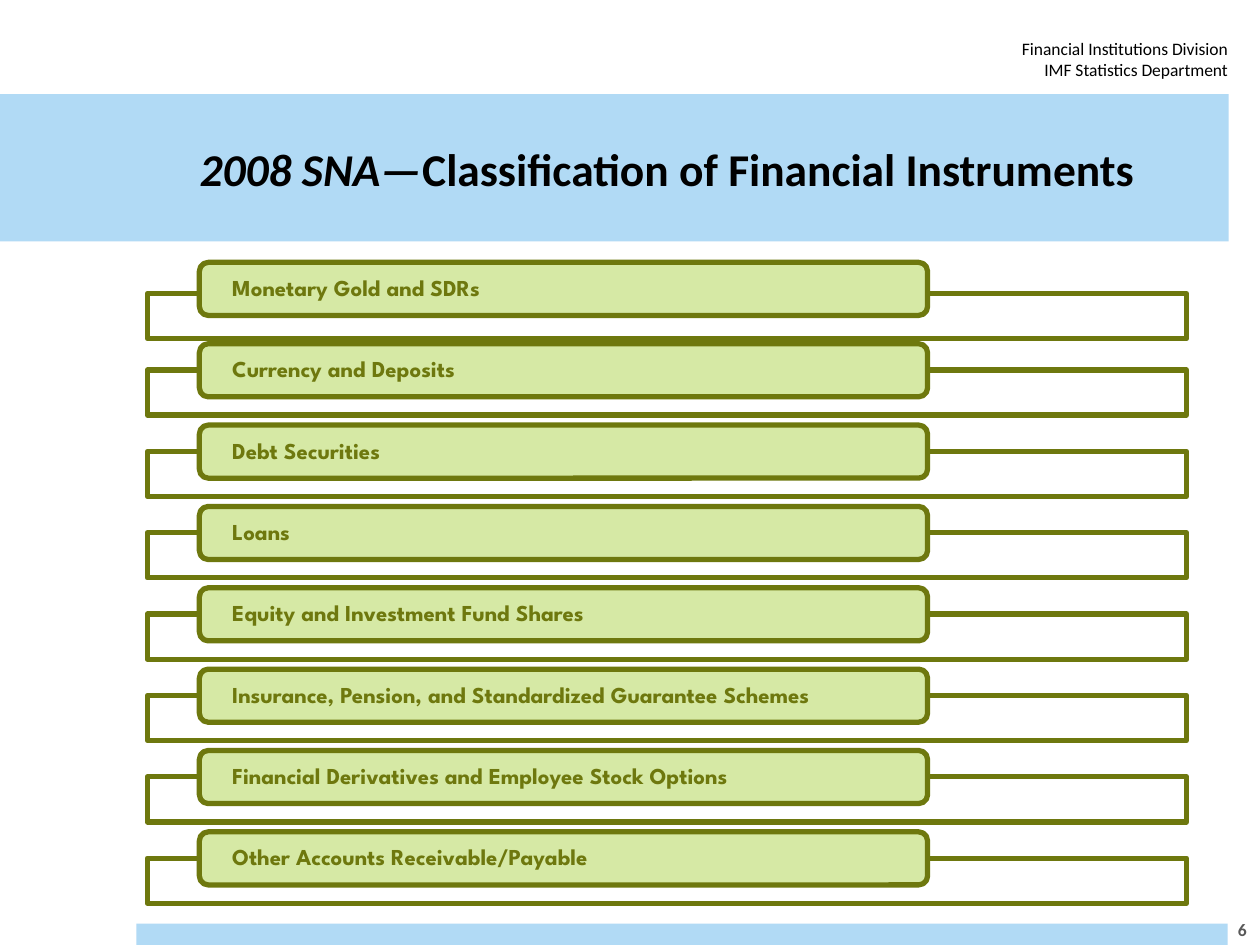
from dataclasses import dataclass

from pptx import Presentation
from pptx.dml.color import RGBColor
from pptx.enum.shapes import MSO_SHAPE
from pptx.enum.text import MSO_ANCHOR, PP_ALIGN
from pptx.util import Cm, Pt

RECT, ROUNDED = MSO_SHAPE.RECTANGLE, MSO_SHAPE.ROUNDED_RECTANGLE
TOP, MIDDLE = MSO_ANCHOR.TOP, MSO_ANCHOR.MIDDLE
LEFT, CENTER, RIGHT = PP_ALIGN.LEFT, PP_ALIGN.CENTER, PP_ALIGN.RIGHT


@dataclass(frozen=True)
class Theme:
    sky: RGBColor = RGBColor(0xB1, 0xDA, 0xF5)
    leaf: RGBColor = RGBColor(0xD6, 0xE9, 0xA5)
    olive: RGBColor = RGBColor(0x6E, 0x78, 0x0E)
    black: RGBColor = RGBColor(0, 0, 0)
    grey: RGBColor = RGBColor(0x59, 0x59, 0x59)
    body_font: str = "Calibri"
    label_font: str = "League Spartan"
    title_size: int = 26
    label_size: int = 13
    small_size: int = 10
    outline: int = 3


class SlideBuilder:
    """Holds the theme and the current slide; lengths are in centimetres."""

    def __init__(self, slide, theme):
        self.slide = slide
        self.theme = theme

    def box(self, kind, place, fill=None, line=None):
        shape = self.slide.shapes.add_shape(kind, *map(Cm, place))
        shape.shadow.inherit = False
        if fill is None:
            shape.fill.background()
        else:
            shape.fill.solid()
            shape.fill.fore_color.rgb = fill
        if line is None:
            shape.line.fill.background()
        else:
            shape.line.color.rgb = line
            shape.line.width = Pt(self.theme.outline)
        return shape

    def text_box(self, place):
        return self.slide.shapes.add_textbox(*map(Cm, place))

    def frame(self, shape, align, anchor=MIDDLE, insets=(0.25, 0.13, 0.25, 0.13)):
        frame = shape.text_frame
        frame.word_wrap = True
        frame.vertical_anchor = anchor
        (frame.margin_left, frame.margin_top,
         frame.margin_right, frame.margin_bottom) = map(Cm, insets)
        paragraph = frame.paragraphs[0]
        paragraph.alignment = align
        return paragraph

    def run(self, paragraph, text, size, color, font=None, bold=False, italic=False):
        run = paragraph.add_run()
        run.text = text
        run.font.name = font or self.theme.body_font
        run.font.size = Pt(size)
        run.font.bold = bold
        run.font.italic = italic
        run.font.color.rgb = color

    def instrument(self, name, label_top, frame_top):
        theme = self.theme
        self.box(RECT, (2.97, frame_top, 20.95, 0.91), line=theme.olive)
        label = self.box(ROUNDED, (4.02, label_top, 14.68, 1.07), theme.leaf, theme.olive)
        paragraph = self.frame(label, LEFT, insets=(0.61, 0, 0.61, 0))
        paragraph.line_spacing = 0.9
        self.run(paragraph, name, theme.label_size, theme.olive, theme.label_font, bold=True)


INSTRUMENTS = [
    "Monetary Gold and SDRs",
    "Currency and Deposits",
    "Debt Securities",
    "Loans",
    "Equity and Investment Fund Shares",
    "Insurance, Pension, and Standardized Guarantee Schemes",
    "Financial Derivatives and Employee Stock Options",
    "Other Accounts Receivable/Payable",
]
FIRST_TOP, ROW_PITCH = 5.29, 1.64
FRAME_DROP, FIRST_FRAME_DROP = 0.53, 0.63


def main():
    deck = Presentation()
    deck.slide_width, deck.slide_height = Cm(25.4), Cm(19.05)
    theme = Theme()
    page = SlideBuilder(deck.slides.add_slide(deck.slide_layouts[6]), theme)

    # Footer bar
    page.box(RECT, (2.75, 18.62, 22, 0.43), theme.sky)

    # Department heading
    department = page.frame(page.text_box((18.85, 0.64, 6.15, 1.12)), RIGHT, TOP)
    page.run(department, "Financial Institutions Division", theme.small_size, theme.black)
    department.add_line_break()
    page.run(department, "IMF Statistics Department", theme.small_size, theme.black)

    # Title band
    band = page.box(RECT, (0, 1.9, 24.77, 2.97), theme.sky)
    title = page.frame(band, CENTER, insets=(2.9, 0.1, 0.76, 0.1))
    page.run(title, "2008 SNA—", theme.title_size, theme.black, bold=True, italic=True)
    page.run(title, "Classification of Financial Instruments",
             theme.title_size, theme.black, bold=True)

    # Page number
    number = page.frame(page.text_box((24.41, 18.21, 1.27, 1.07)), CENTER)
    page.run(number, "6", theme.small_size, theme.grey, bold=True)

    # Financial instruments; the first frame hangs slightly lower
    for row, name in enumerate(INSTRUMENTS):
        label_top = FIRST_TOP + row * ROW_PITCH
        drop = FRAME_DROP if row else FIRST_FRAME_DROP
        page.instrument(name, label_top, label_top + drop)

    deck.save("out.pptx")


if __name__ == "__main__":
    main()
